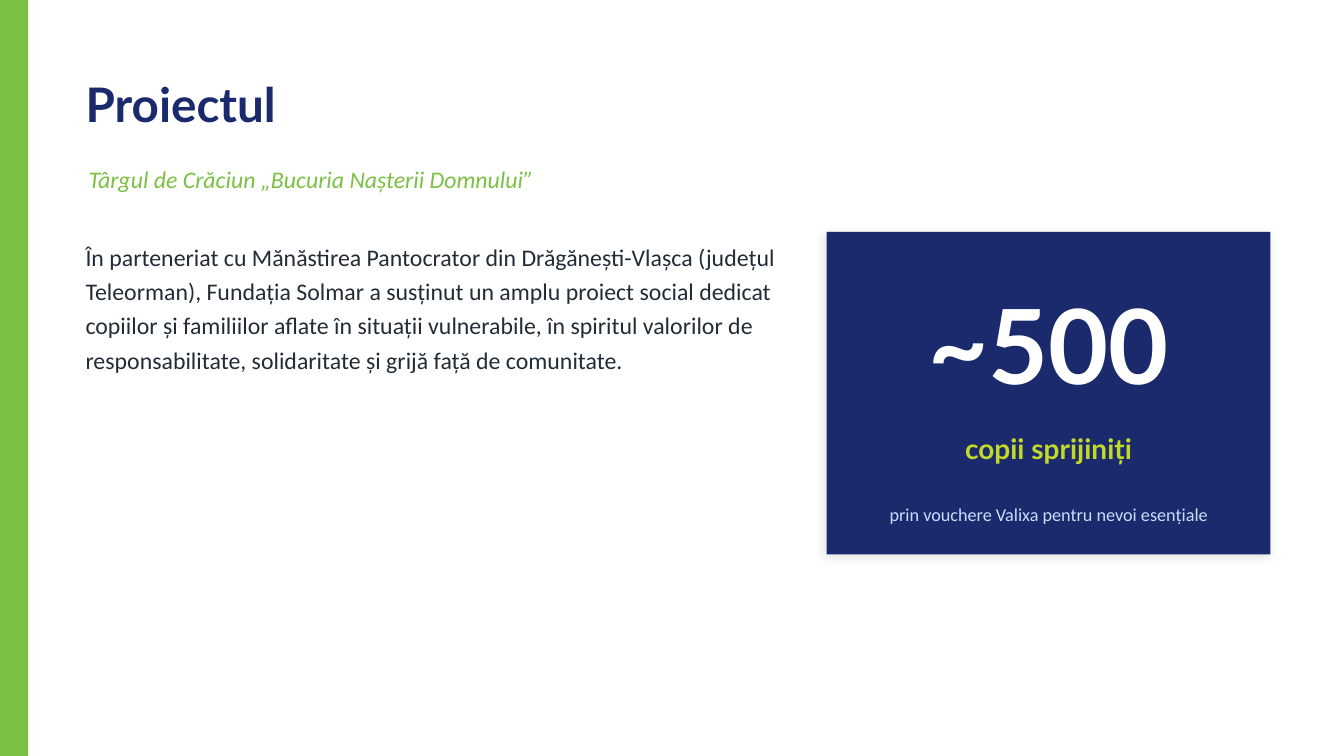
from dataclasses import dataclass, field

from lxml import etree
from pptx import Presentation, util as u
from pptx.dml.color import RGBColor
from pptx.enum import shapes, text
from pptx.oxml.ns import qn

PX = 9144  # EMU per px, 100 px to the inch


@dataclass(frozen=True)
class Theme:
    head: str = "Lato"
    body: str = "Calibri"
    navy: str = "1A2A6C"
    green: str = "7AC143"
    lime: str = "C3D928"
    ink: str = "222C37"
    white: str = "FFFFFF"
    pale: str = "CADCFC"
    shade: str = "000000"
    title: int = 34
    copy: int = 17
    hero: int = 74
    label: int = 20
    note: int = 13


@dataclass(frozen=True)
class Box:
    left: int
    top: int
    width: int
    height: int

    def emu(self) -> list[u.Emu]:
        return [u.Emu(n * PX) for n in (self.left, self.top, self.width, self.height)]


@dataclass(frozen=True)
class Block:
    box: Box
    words: str
    color: str
    font: dict
    frame: dict = field(default_factory=dict)
    para: dict = field(default_factory=dict)


T = Theme()
PAGE = Box(0, 0, 1333, 750)
BAR = Box(0, 0, 28, PAGE.height)
CARD = Box(820, 230, 440, 320)

MID = {"vertical_anchor": text.MSO_ANCHOR.MIDDLE}
FLUSH = MID | {f"margin_{side}": 0 for side in ("left", "top", "right", "bottom")}
LEFT = {"alignment": text.PP_ALIGN.LEFT}
CENTER = {"alignment": text.PP_ALIGN.CENTER}


def style(name: str, size: int, **more: bool) -> dict:
    return {"name": name, "size": u.Pt(size)} | more


TITLE = Block(Box(75, 55, 1190, 95), "Proiectul", T.navy,
              style(T.head, T.title, bold=True), MID, LEFT)
BLOCKS = [
    Block(Box(78, 150, 1190, 55), "Târgul de Crăciun „Bucuria Nașterii Domnului”",
          T.green, style(T.body, T.copy, italic=True), MID, LEFT),
    Block(Box(75, 230, 710, 260),
          "În parteneriat cu Mănăstirea Pantocrator din Drăgănești-Vlașca (județul "
          "Teleorman), Fundația Solmar a susținut un amplu proiect social dedicat "
          "copiilor și familiilor aflate în situații vulnerabile, în spiritul valorilor "
          "de responsabilitate, solidaritate și grijă față de comunitate.",
          T.ink, style(T.body, T.copy), para=LEFT | {"line_spacing": 1.2}),
    Block(Box(CARD.left, 270, CARD.width, 140), "~500", T.white,
          style(T.head, T.hero, bold=True), FLUSH, CENTER),
    Block(Box(CARD.left, 415, CARD.width, 60), "copii sprijiniți", T.lime,
          style(T.head, T.label, bold=True), FLUSH, CENTER),
    Block(Box(CARD.left + 20, 475, CARD.width - 40, 70),
          "prin vouchere Valixa pentru nevoi esențiale", T.pale,
          style(T.body, T.note), FLUSH, CENTER),
]


def apply(target, values: dict) -> None:
    for name, value in values.items():
        setattr(target, name, value)


def write(shape, block: Block) -> None:
    """Place a text shape, then fill and format it."""
    apply(shape, dict(zip(("left", "top", "width", "height"), block.box.emu())))
    frame = shape.text_frame
    frame.text = block.words
    apply(frame, {"word_wrap": True, "auto_size": text.MSO_AUTO_SIZE.NONE} | block.frame)
    para = frame.paragraphs[0]
    apply(para, block.para)
    font = para.runs[0].font
    apply(font, block.font)
    font.color.rgb = RGBColor.from_string(block.color)


def panel(slide, box: Box, color: str):
    """Add a plain filled rectangle."""
    shape = slide.shapes.add_shape(shapes.MSO_SHAPE.RECTANGLE, *box.emu())
    shape.shadow.inherit = False
    shape.fill.solid()
    shape.fill.fore_color.rgb = RGBColor.from_string(color)
    shape.line.fill.background()
    return shape


def shade(shape, blur: int, dist: int, angle: int, alpha: int) -> None:
    """Add an outer shadow: points, degrees and percent."""
    effects = shape._element.spPr.find(qn("a:effectLst"))
    outer = etree.SubElement(effects, qn("a:outerShdw"), blurRad=str(u.Pt(blur)),
                             dist=str(u.Pt(dist)), dir=str(angle * 60000),
                             algn="bl", rotWithShape="0")
    color = etree.SubElement(outer, qn("a:srgbClr"), val=T.shade)
    etree.SubElement(color, qn("a:alpha"), val=str(alpha * 1000))


def main() -> None:
    deck = Presentation()
    _, _, deck.slide_width, deck.slide_height = PAGE.emu()
    slide = deck.slides.add_slide(deck.slide_layouts[5])
    fill = slide.background.fill
    fill.solid()
    fill.fore_color.rgb = RGBColor.from_string(T.white)

    write(slide.shapes.title, TITLE)
    panel(slide, BAR, T.green)
    shade(panel(slide, CARD, T.navy), blur=8, dist=2, angle=135, alpha=12)
    for block in BLOCKS:
        write(slide.shapes.add_textbox(*block.box.emu()), block)
    deck.save("out.pptx")


if __name__ == "__main__":
    main()
